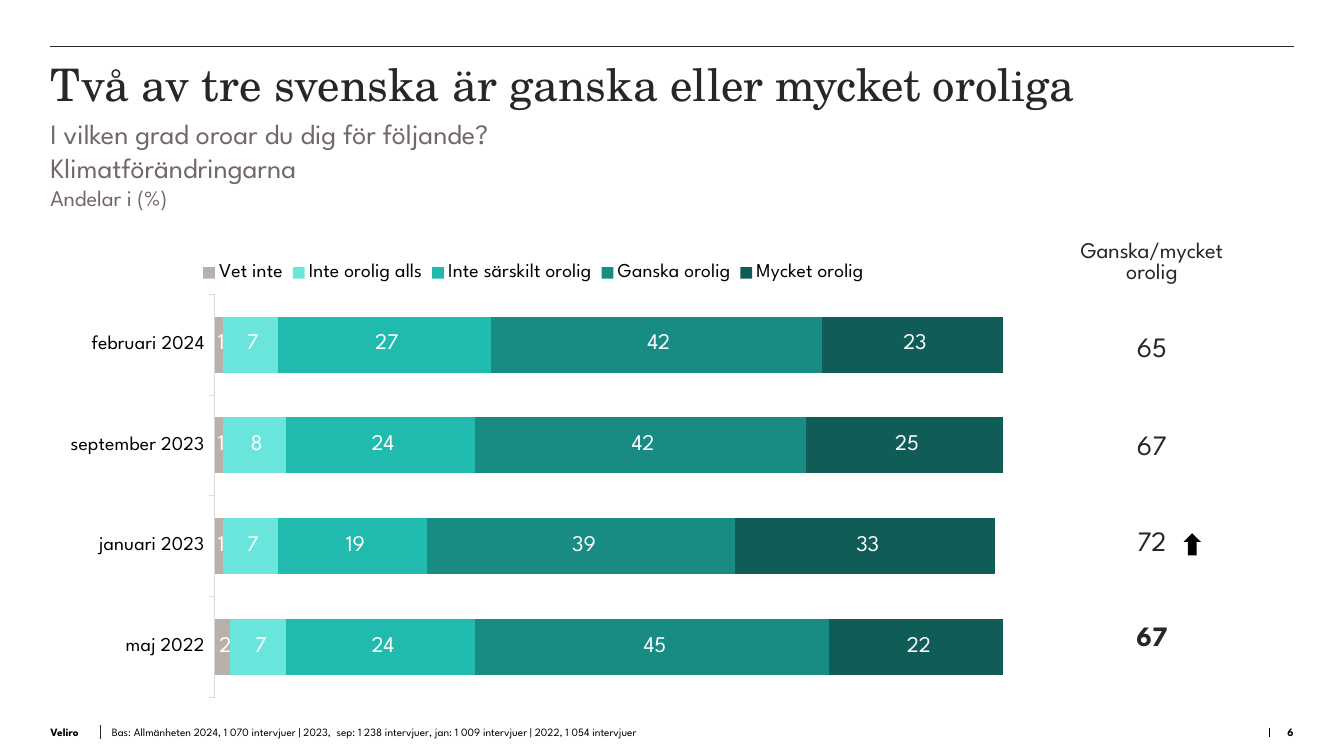
from lxml.etree import SubElement
from pptx import Presentation
from pptx.chart.data import CategoryChartData
from pptx.dml.color import RGBColor
from pptx.enum.chart import (XL_CHART_TYPE as ChartType, XL_LABEL_POSITION as LabelPosition,
                             XL_LEGEND_POSITION as LegendPosition, XL_TICK_MARK as TickMark)
from pptx.enum.shapes import MSO_CONNECTOR as Connector, MSO_SHAPE as Preset
from pptx.enum.text import MSO_ANCHOR as Anchor, MSO_AUTO_SIZE as AutoSize, PP_ALIGN as Align
from pptx.oxml.ns import qn
from pptx.util import Inches, Pt

SANS, SERIF = "League Spartan", "TeX Gyre Schola"
INK, GREY, BLACK, WHITE = "282626", "736868", "000000", "FFFFFF"
NUMBER_FORMAT = r"#\ ##0"

PERIODS = ["februari 2024", "september 2023", "januari 2023", "maj 2022"]
ANSWERS = [
    ("Vet inte", (1, 1, 1, 2), "BAB0AB"),
    ("Inte orolig alls", (7, 8, 7, 7), "6AE5DC"),
    ("Inte särskilt orolig", (27, 24, 19, 24), "20BAAF"),
    ("Ganska orolig", (42, 42, 39, 45), "188B83"),
    ("Mycket orolig", (23, 25, 33, 22), "105D58"),
]
SUMMARY_ROWS = [("Ganska/mycket orolig", 0.64), ("65", 0.97), ("67", 0.96),
                ("72", 0.96), ("67", 0.91)]


def color(hex_value):
    return RGBColor.from_string(hex_value)


def style_font(font, size, hex_value, name=SANS, bold=False):
    font.name, font.size, font.bold = name, Pt(size), bold
    font.color.rgb = color(hex_value)


def place(shape, left, top, width, height):
    shape.left, shape.top = Inches(left), Inches(top)
    shape.width, shape.height = Inches(width), Inches(height)


def fill_text(shape, text, size, hex_value, name=SANS, bold=False, align=Align.LEFT,
              anchor=Anchor.TOP, top_inset=0):
    frame = shape.text_frame
    frame.word_wrap, frame.auto_size = True, AutoSize.NONE
    frame.vertical_anchor = anchor
    frame.margin_left = frame.margin_right = frame.margin_bottom = 0
    frame.margin_top = Inches(top_inset)
    frame.text = text
    for paragraph in frame.paragraphs:
        paragraph.alignment, paragraph.space_before = align, Pt(0)
        style_font(paragraph.font, size, hex_value, name, bold)


def remove_bullets(shape):
    for paragraph in shape.text_frame.paragraphs:
        properties = paragraph._p.get_or_add_pPr()
        properties.set("marL", "0")
        properties.set("indent", "0")
        properties.insert_element_before(
            properties.makeelement(qn("a:buNone")), "a:tabLst", "a:defRPr", "a:extLst")


def add_label(slide, box, text, size, hex_value, **options):
    shape = slide.shapes.add_textbox(*map(Inches, box))
    fill_text(shape, text, size, hex_value, **options)


def add_rule(slide, start, end, hex_value):
    line = slide.shapes.add_connector(Connector.STRAIGHT, *map(Inches, start + end))
    line.line.color.rgb, line.line.width = color(hex_value), Pt(0.5)
    SubElement(line._element.spPr, qn("a:effectLst"))


def set_layout(element, **fractions):
    """Position a plot area or legend by fractions of the chart."""
    for old in element.findall(qn("c:layout")):
        element.remove(old)
    layout = element.makeelement(qn("c:layout"))
    manual = SubElement(layout, qn("c:manualLayout"))
    if element.tag == qn("c:plotArea"):
        SubElement(manual, qn("c:layoutTarget")).set("val", "inner")
        element.insert(0, layout)
    else:
        element.find(qn("c:legendPos")).addnext(layout)
    for mode in ("xMode", "yMode"):
        SubElement(manual, qn(f"c:{mode}")).set("val", "edge")
    for key, value in fractions.items():
        SubElement(manual, qn(f"c:{key}")).set("val", str(value))


def add_answer_chart(slide):
    data = CategoryChartData(number_format=NUMBER_FORMAT)
    data.categories = PERIODS
    for name, values, _ in ANSWERS:
        data.add_series(name, values)
    box = map(Inches, (0.5, 2.5, 9.64, 4.51))
    chart = slide.shapes.add_chart(ChartType.BAR_STACKED, *box, data).chart
    style_font(chart.font, 10, BLACK)
    chart.has_title = False

    chart.has_legend = True
    chart.legend.position, chart.legend.include_in_layout = LegendPosition.TOP, False
    style_font(chart.legend.font, 14, BLACK)
    set_layout(chart.legend._element, x=0.147, y=0.006, w=0.7, h=0.08)
    set_layout(chart._chartSpace.chart.plotArea, x=0.169, y=0.093, w=0.811, h=0.887)

    periods, shares = chart.category_axis, chart.value_axis
    periods.reverse_order = True
    periods.major_tick_mark = TickMark.OUTSIDE
    periods.format.line.color.rgb, periods.format.line.width = color("D9D9D9"), Pt(0.75)
    style_font(periods.tick_labels.font, 14, BLACK)
    shares.visible = shares.has_major_gridlines = False
    shares.minimum_scale, shares.maximum_scale = 0, 100

    plot = chart.plots[0]
    plot.gap_width, plot.overlap, plot.vary_by_categories = 80, 100, False
    for series, (_, _, hex_value) in zip(plot.series, ANSWERS):
        series.format.fill.solid()
        series.format.fill.fore_color.rgb = color(hex_value)
        labels = series.data_labels
        labels.show_value, labels.position = True, LabelPosition.CENTER
        labels.number_format, labels.number_format_is_linked = NUMBER_FORMAT, False
        style_font(labels.font, 16, WHITE)


def add_summary_table(slide):
    box = map(Inches, (10.37, 2.36, 2.11, 4.44))
    table = slide.shapes.add_table(len(SUMMARY_ROWS), 1, *box).table
    table.first_row = table.horz_banding = False
    last = len(SUMMARY_ROWS) - 1
    for index, (text, height) in enumerate(SUMMARY_ROWS):
        table.rows[index].height = Inches(height)
        cell = table.cell(index, 0)
        cell.fill.background()
        cell.text = text
        cell.vertical_anchor = Anchor.MIDDLE if index else Anchor.TOP
        paragraph = cell.text_frame.paragraphs[0]
        paragraph.alignment = Align.CENTER
        style_font(paragraph.font, 20 if index else 16, INK, bold=index == last)


def add_up_arrow(slide):
    arrow = slide.shapes.add_shape(Preset.UP_ARROW, *map(Inches, (11.74, 5.29, 0.17, 0.22)))
    arrow.shadow.inherit = False
    arrow.fill.solid()
    arrow.fill.fore_color.rgb = color(BLACK)
    arrow.line.fill.background()


def add_footer(slide):
    add_rule(slide, (1, 7.33), (1, 7.19), INK)
    add_rule(slide, (12.59, 7.22), (12.59, 7.31), BLACK)
    add_label(slide, (0.5, 7.16, 0.5, 0.17), "Veliro", 8, BLACK, bold=True,
              anchor=Anchor.BOTTOM)
    add_label(slide, (1.11, 7.16, 7.8, 0.17),
              "Bas: Allmänheten 2024, 1 070 intervjuer | 2023,  sep: 1 238 intervjuer, "
              "jan: 1 009 intervjuer | 2022, 1 054 intervjuer", 8, BLACK, anchor=Anchor.BOTTOM)
    add_label(slide, (12.59, 7.16, 0.24, 0.17), "6", 8, BLACK, bold=True,
              align=Align.RIGHT, anchor=Anchor.BOTTOM)


def main():
    presentation = Presentation()
    presentation.slide_width, presentation.slide_height = Inches(13.33), Inches(7.5)
    slide = presentation.slides.add_slide(presentation.slide_layouts[1])

    add_rule(slide, (0.5, 0.46), (12.83, 0.46), INK)
    title, question = slide.placeholders
    place(title, 0.5, 0.46, 12.32, 0.71)
    fill_text(title, "Två av tre svenska är ganska eller mycket oroliga", 32, INK,
              name=SERIF, top_inset=0.1)
    place(question, 0.5, 1.16, 8.4, 0.67)
    fill_text(question, "I vilken grad oroar du dig för följande?\vKlimatförändringarna",
              20, GREY)
    remove_bullets(question)
    add_label(slide, (0.5, 1.83, 8.4, 0.46), "Andelar i (%)", 16, GREY)

    add_answer_chart(slide)
    add_summary_table(slide)
    add_up_arrow(slide)
    add_footer(slide)
    presentation.save("out.pptx")


if __name__ == "__main__":
    main()
